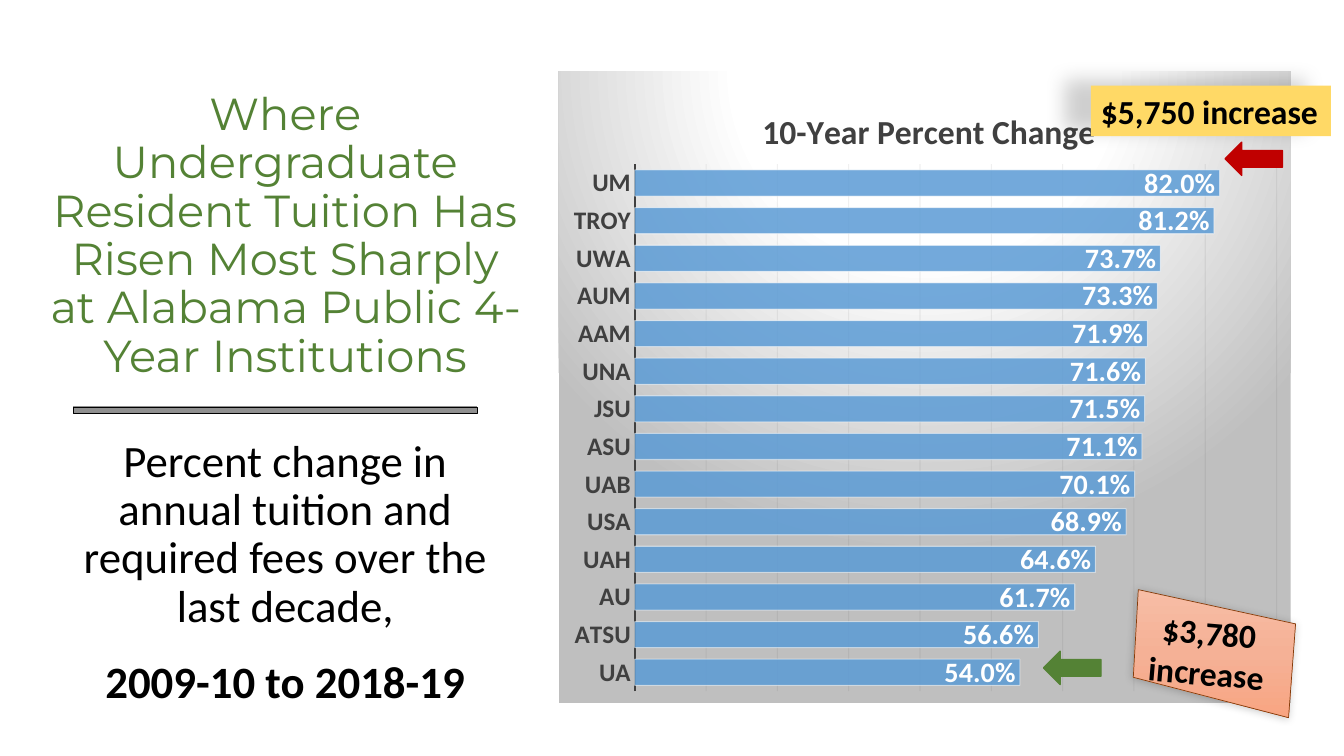
from lxml import etree
from pptx import Presentation
from pptx import util as u
from pptx.chart.data import CategoryChartData
from pptx.dml.color import RGBColor
from pptx.enum import chart as ch, shapes as sh, text as tx
from pptx.oxml import parse_xml
from pptx.oxml.ns import nsdecls, qn

WIDE, HIGH = 13.33, 7.5
SIDE = (0, 0, 5.46, HIGH)
PANEL = (5.54, 0.71, 7.26, 6.26)
RATES = {
    "UM": 0.82, "TROY": 0.812, "UWA": 0.737, "AUM": 0.733, "AAM": 0.719,
    "UNA": 0.716, "JSU": 0.715, "ASU": 0.711, "UAB": 0.701, "USA": 0.689,
    "UAH": 0.646, "AU": 0.617, "ATSU": 0.566, "UA": 0.54,
}


def place(box, x, y, w, h):
    return [u.Inches(v) for v in (box[0] + x, box[1] + y, w, h)]


def tint(part, code, alpha=None):
    if hasattr(part, "solid"):
        part.solid()
        part = part.fore_color
    part.rgb = RGBColor.from_string(code)
    if alpha:
        node = part._xFill.find(qn("a:srgbClr"))
        etree.SubElement(node, qn("a:alpha")).set("val", str(alpha * 1000))


def edge(line, code, width, alpha=None):
    tint(line.fill, code, alpha)
    line.width = u.Pt(width)


def style(font, size, code="000000", bold=False, face="Calibri"):
    font.size, font.bold, font.name = u.Pt(size), bold, face
    tint(font.color, code)


def blend(stops, way):
    marks = "".join(
        f'<a:gs pos="{pos * 1000}"><a:srgbClr val="{code}"/></a:gs>'
        for pos, code in stops)
    return parse_xml(f'<a:gradFill {nsdecls("a")} rotWithShape="1">'
                     f'<a:gsLst>{marks}</a:gsLst>{way}</a:gradFill>')


def shade(shape, *codes):
    shape.fill.background()
    old = shape._element.spPr.find(qn("a:noFill"))
    fill = blend(zip((0, 50, 100), codes), '<a:lin ang="5400000" scaled="0"/>')
    old.getparent().replace(old, fill)


def cast(shape, alpha, blur, dist, angle):
    shape.shadow.inherit = False
    glow = shape._element.spPr.find(qn("a:effectLst"))
    glow.append(parse_xml(
        f'<a:outerShdw {nsdecls("a")} blurRad="{u.Pt(blur)}" '
        f'dist="{u.Pt(dist)}" dir="{angle * 60000}" algn="ctr" '
        f'rotWithShape="0"><a:srgbClr val="000000">'
        f'<a:alpha val="{alpha * 1000}"/></a:srgbClr></a:outerShdw>'))


def write(shape, lines, size, code="000000", bold=(), face="Calibri",
          align=tx.PP_ALIGN.CENTER, space=1, gap=0):
    frame = shape.text_frame
    frame.text = "\n".join(lines)
    frame.word_wrap = True
    for i, para in enumerate(frame.paragraphs):
        para.alignment, para.line_spacing = align, space
        para.space_before = u.Pt(gap if i else 0)
        style(para.runs[0].font, size, code, i in bold, face)
    return frame


def add_side(slide, box):
    title = slide.shapes.add_textbox(*place(box, 0.4, 0.17, 4.86, 3.67))
    frame = write(title, ["Where Undergraduate Resident Tuition Has Risen Most "
                          "Sharply at Alabama Public 4-Year Institutions"],
                  32, "548235", face="Montserrat", space=0.9)
    frame.vertical_anchor = tx.MSO_ANCHOR.BOTTOM
    rule = slide.shapes.add_shape(sh.MSO_SHAPE.MATH_MINUS,
                                  *place(box, 0, 3.93, box[2], 0.28))
    rule.shadow.inherit = False
    shade(rule, "9D9D9D", "909090", "7C7C7C")
    edge(rule.line, "000000", 0.5)
    body = slide.shapes.add_textbox(*place(box, 0.68, 4.3, 4.3, 3.11))
    write(body, ["Percent change in annual tuition and required fees over "
                 "the last decade,", "2009-10 to 2018-19"],
          32, bold=(1,), space=0.9, gap=20)


def pin(node, index, inner="", **spots):
    for old in node.findall(qn("c:layout")):
        node.remove(old)
    rules = "".join(f'<c:{k}Mode val="edge"/>' for k in "xy")
    vals = "".join(f'<c:{k} val="{v}"/>' for k, v in spots.items())
    node.insert(index, parse_xml(
        f'<c:layout {nsdecls("c")}><c:manualLayout>{inner}{rules}{vals}'
        f'</c:manualLayout></c:layout>'))


def add_bars(slide, box):
    data = CategoryChartData(number_format="0.0%")
    data.categories = list(RATES)
    data.add_series("Series 1", list(RATES.values()))
    chart = slide.shapes.add_chart(ch.XL_CHART_TYPE.BAR_CLUSTERED,
                                   *place(box, 0, 0, *box[2:]), data).chart
    style(chart.font, 10)
    chart.has_legend = False
    chart.has_title = True
    head = chart.chart_title
    head.text_frame.text = "10-Year Percent Change"
    style(head.text_frame.paragraphs[0].runs[0].font, 24, "404040", True)
    pin(head._element, 1, x=0.27, y=0.05)
    root = chart._chartSpace
    pin(root.chart.plotArea, 0, '<c:layoutTarget val="inner"/>',
        x=0.104, y=0.147, w=0.877, h=0.835)
    back = parse_xml(f'<c:spPr {nsdecls("c", "a")}/>')
    back.append(blend(
        [(0, "FFFFFF"), (39, "FFFFFF"), (100, "BFBFBF")],
        '<a:path path="circle"><a:fillToRect l="50000" t="-80000" '
        'r="50000" b="180000"/></a:path>'))
    etree.SubElement(etree.SubElement(back, qn("a:ln")), qn("a:noFill"))
    root.chart.addnext(back)

    names, scale = chart.category_axis, chart.value_axis
    names.reverse_order = True
    names.major_tick_mark = ch.XL_TICK_MARK.NONE
    style(names.tick_labels.font, 18, "404040", True)
    edge(names.format.line, "404040", 1.5)
    scale.minimum_scale, scale.maximum_scale = 0, 0.9
    scale.major_unit = 0.1
    scale.visible = False
    scale.has_major_gridlines = True
    edge(scale.major_gridlines.format.line, "0D0D0D", 0.75, 5)

    plot = chart.plots[0]
    plot.gap_width, plot.vary_by_categories = 44, False
    bars = plot.series[0]
    tint(bars.format.fill, "5B9BD5", 85)
    edge(bars.format.line, "FFFFFF", 0.75, 50)
    tags = bars.data_labels
    tags.show_value = True
    tags.position = ch.XL_LABEL_POSITION.INSIDE_END
    tags.number_format, tags.number_format_is_linked = "0.0%", False
    style(tags.font, 20, "FFFFFF", True)


def add_notes(slide, box):
    for x, y, code in ((6.61, 0.7, "C00000"), (4.81, 5.75, "548235")):
        arrow = slide.shapes.add_shape(sh.MSO_SHAPE.RIGHT_ARROW,
                                       *place(box, x, y, 0.57, 0.33))
        arrow.rotation = 180
        arrow.shadow.inherit = False
        tint(arrow.fill, code)
        edge(arrow.line, code, 1)

    top = slide.shapes.add_shape(sh.MSO_SHAPE.RECTANGLE,
                                 *place(box, 5.28, 0.14, 2.38, 0.5))
    tint(top.fill, "FFD966")
    top.line.fill.background()
    cast(top, 18, 14.5, 19, 192)
    frame = write(top, ["$5,750 increase"], 24, bold=(0,),
                  align=tx.PP_ALIGN.LEFT)
    frame.word_wrap = False

    spots = [place(box, x, y, 0, 0)[:2] for x, y in
             ((5.75, 5.14), (7.31, 5.48), (7.24, 6.41), (5.7, 6.01))]
    draft = slide.shapes.build_freeform(*spots[0])
    draft.add_line_segments(spots[1:])
    card = draft.convert_to_shape()
    shade(card, "F7BDA5", "F5B196", "F8A582")
    edge(card.line, "843C0B", 0.5)
    cast(card, 20, 6, 1, 135)
    label = slide.shapes.add_textbox(*place(box, 5.69, 5.31, 1.5, 0.9))
    label.rotation = 5
    frame = write(label, ["$3,780", "increase"], 24, bold=(0, 1))
    frame.vertical_anchor = tx.MSO_ANCHOR.MIDDLE


def main():
    deck = Presentation()
    deck.slide_width, deck.slide_height = u.Inches(WIDE), u.Inches(HIGH)
    slide = deck.slides.add_slide(deck.slide_layouts[6])
    add_side(slide, SIDE)
    add_bars(slide, PANEL)
    add_notes(slide, PANEL)
    deck.save("out.pptx")


if __name__ == "__main__":
    main()
